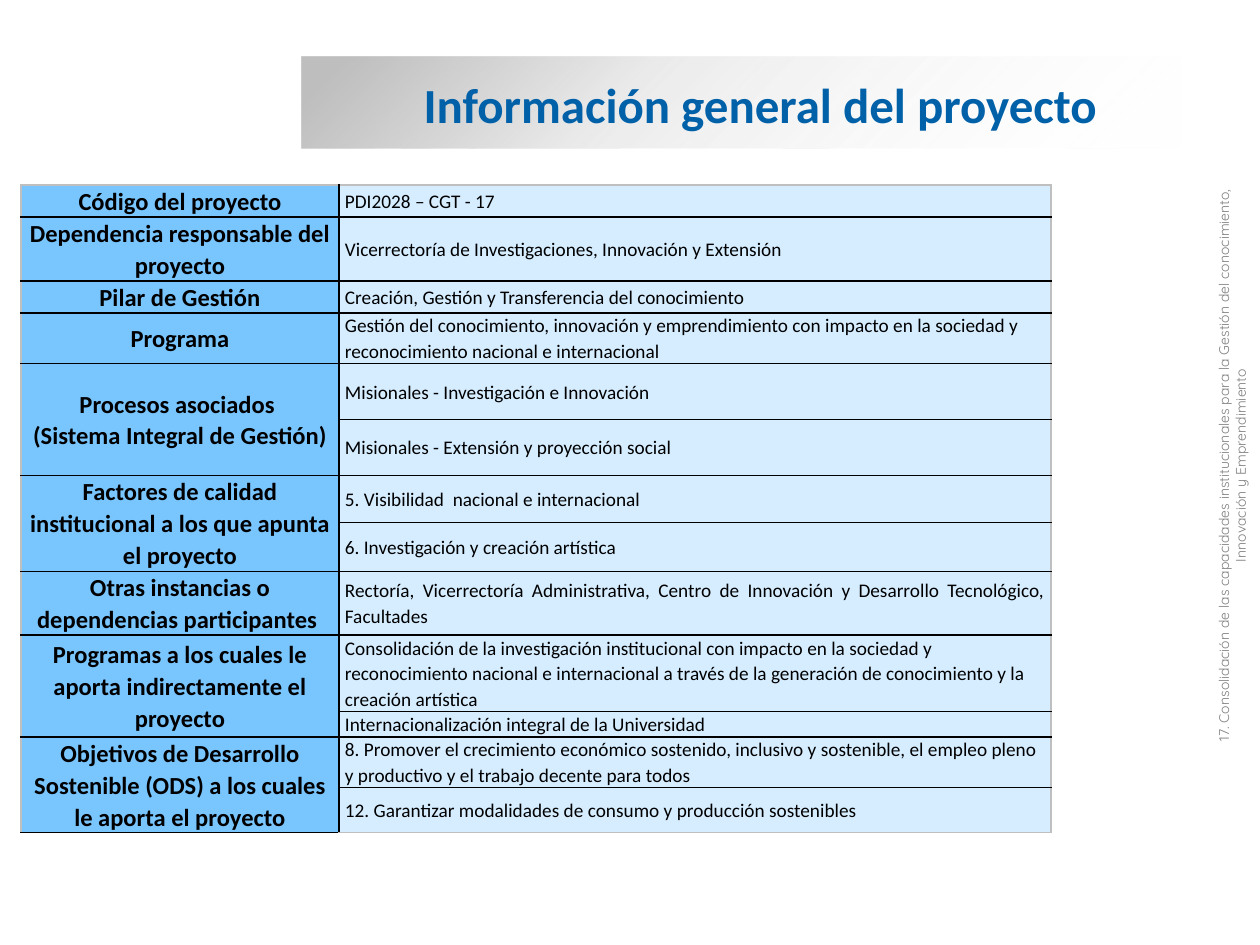
import dataclasses
import typing

import lxml.etree
import pptx
import pptx.dml.color
import pptx.enum.shapes
import pptx.enum.text
import pptx.oxml
import pptx.oxml.ns
import pptx.util

EMU_PER_PX = 914400 / 126
ALIGN = pptx.enum.text.PP_ALIGN
MIDDLE = pptx.enum.text.MSO_ANCHOR.MIDDLE
BLACK, EDGE = "000000", "BFBFBF"


@dataclasses.dataclass(frozen=True)
class Value:
    text: str
    height: int
    align: typing.Any = ALIGN.LEFT
    space_after: int = 0


@dataclasses.dataclass(frozen=True)
class Field:
    label: str
    values: tuple[Value, ...]


FIELDS = (
    Field("Código del proyecto", (Value("PDI2028 – CGT - 17", 31),)),
    Field("Dependencia responsable del proyecto",
          (Value("Vicerrectoría de Investigaciones, Innovación y Extensión", 63),)),
    Field("Pilar de Gestión",
          (Value("Creación, Gestión y Transferencia del conocimiento", 32),)),
    Field("Programa",
          (Value("Gestión del conocimiento, innovación y emprendimiento con impacto "
                 "en la sociedad y reconocimiento nacional e internacional", 49),)),
    Field("Procesos asociados \v(Sistema Integral de Gestión)",
          (Value("Misionales - Investigación e Innovación", 56),
           Value("Misionales - Extensión y proyección social", 56))),
    Field("Factores de calidad institucional a los que apunta el proyecto",
          (Value("5. Visibilidad  nacional e internacional", 47, space_after=8),
           Value("6. Investigación y creación artística", 47, space_after=8))),
    Field("Otras instancias o dependencias participantes ",
          (Value("Rectoría, Vicerrectoría Administrativa, Centro de Innovación y "
                 "Desarrollo Tecnológico, Facultades", 63, ALIGN.JUSTIFY),)),
    Field("Programas a los cuales le aporta indirectamente el proyecto",
          (Value("Consolidación de la investigación institucional con impacto en la "
                 "sociedad y reconocimiento nacional e internacional a través de la "
                 "generación de conocimiento y la creación artística", 74),
           Value("Internacionalización integral de la Universidad", 25, space_after=8))),
    Field("Objetivos de Desarrollo Sostenible (ODS) a los cuales le aporta el proyecto",
          (Value("8. Promover el crecimiento económico sostenido, inclusivo y sostenible, "
                 "el empleo pleno y productivo y el trabajo decente para todos", 50),
           Value("12. Garantizar modalidades de consumo y producción sostenibles", 45))),
)


def px(length: int) -> pptx.util.Emu:
    return pptx.util.Emu(round(length * EMU_PER_PX))


def rgb(value: str) -> pptx.dml.color.RGBColor:
    return pptx.dml.color.RGBColor.from_string(value)


def set_font(paragraph, name: str, size: int, color: str, bold: bool = False) -> None:
    font = paragraph.font
    font.name, font.size, font.bold = name, pptx.util.Pt(size), bold
    font.color.rgb = rgb(color)


def add_title_band(slide) -> None:
    band = slide.shapes.add_shape(
        pptx.enum.shapes.MSO_SHAPE.RECTANGLE, px(302), px(57), px(880), px(91))
    band.shadow.inherit = False
    band.line.fill.background()
    band.fill.background()
    stops = "".join(
        f'<a:gs pos="{position * 1000}"><a:srgbClr val="{color}">'
        f'<a:alpha val="{opacity * 1000}"/></a:srgbClr></a:gs>'
        for position, color, opacity in
        ((5, "BFBFBF", 100), (37, "BFBFBF", 31), (100, "FFFFFF", 0)))
    gradient = pptx.oxml.parse_xml(
        f'<a:gradFill {pptx.oxml.ns.nsdecls("a")} rotWithShape="1">'
        f'<a:gsLst>{stops}</a:gsLst><a:lin ang="2700000" scaled="0"/></a:gradFill>')
    properties = band._element.spPr
    properties.replace(properties.find(pptx.oxml.ns.qn("a:noFill")), gradient)


def format_title(slide) -> None:
    title = slide.shapes.title
    title.left, title.top, title.width, title.height = px(411), px(68), px(781), px(72)
    title.text_frame.text = "Información general del proyecto"
    title.text_frame.vertical_anchor = MIDDLE
    paragraph = title.text_frame.paragraphs[0]
    paragraph.alignment = ALIGN.LEFT
    set_font(paragraph, "Calibri", 28, "0060A8", True)
    tree = slide.shapes._spTree
    tree.append(title._element)


def set_borders(cell, colors: dict[str, str]) -> None:
    properties = cell._tc.get_or_add_tcPr()
    for side, color in colors.items():
        properties.append(pptx.oxml.parse_xml(
            f'<a:ln{side} {pptx.oxml.ns.nsdecls("a")} w="12700"><a:solidFill>'
            f'<a:srgbClr val="{color}"/></a:solidFill></a:ln{side}>'))


def fill_cell(cell, text: str, size: int, color: str, margin: int, align,
              bold: bool = False, space_after: int = 0) -> None:
    cell.text_frame.text = text
    cell.vertical_anchor = MIDDLE
    cell.margin_left = cell.margin_right = px(margin)
    cell.margin_top = cell.margin_bottom = 0
    cell.fill.solid()
    cell.fill.fore_color.rgb = rgb(color)
    paragraph = cell.text_frame.paragraphs[0]
    paragraph.alignment = align
    paragraph.line_spacing = 1.07
    paragraph.space_after = pptx.util.Pt(space_after)
    set_font(paragraph, "Calibri", size, BLACK, bold)


def add_project_table(slide) -> None:
    values = [value for field in FIELDS for value in field.values]
    widths = (318, 712)
    table = slide.shapes.add_table(
        len(values), len(widths), px(21), px(185), px(sum(widths)),
        px(sum(value.height for value in values))).table
    table.first_row = table.horz_banding = False
    for column, width in zip(table.columns, widths):
        column.width = px(width)
    last = len(values) - 1
    for index, value in enumerate(values):
        table.rows[index].height = px(value.height)
        for column in range(2):
            set_borders(table.cell(index, column), {
                "L": BLACK if column else EDGE,
                "R": EDGE if column else BLACK,
                "T": BLACK if index else EDGE,
                "B": EDGE if index == last else BLACK,
            })
        fill_cell(table.cell(index, 1), value.text, 11, "D5EDFF", 6,
                  value.align, space_after=value.space_after)
    start = 0
    for field in FIELDS:
        end = start + len(field.values) - 1
        label = table.cell(start, 0)
        if end > start:
            label.merge(table.cell(end, 0))
        fill_cell(label, field.label, 14, "79C6FF", 5, ALIGN.CENTER, True)
        start = end + 1


def add_side_caption(slide) -> None:
    caption = slide.shapes.add_textbox(px(915), px(442), px(635), px(47))
    caption.rotation = 270
    frame = caption.text_frame
    frame.word_wrap = True
    frame.text = ("17. Consolidación de las capacidades institucionales para la Gestión "
                  "del conocimiento, Innovación y Emprendimiento")
    frame.paragraphs[0].alignment = ALIGN.CENTER
    set_font(frame.paragraphs[0], "Quicksand", 8, "808080")


def main() -> None:
    presentation = pptx.Presentation()
    presentation.slide_width, presentation.slide_height = px(1260), px(945)
    slide = presentation.slides.add_slide(presentation.slide_layouts[5])
    add_title_band(slide)
    format_title(slide)
    add_project_table(slide)
    add_side_caption(slide)
    presentation.save("out.pptx")


if __name__ == "__main__":
    main()
